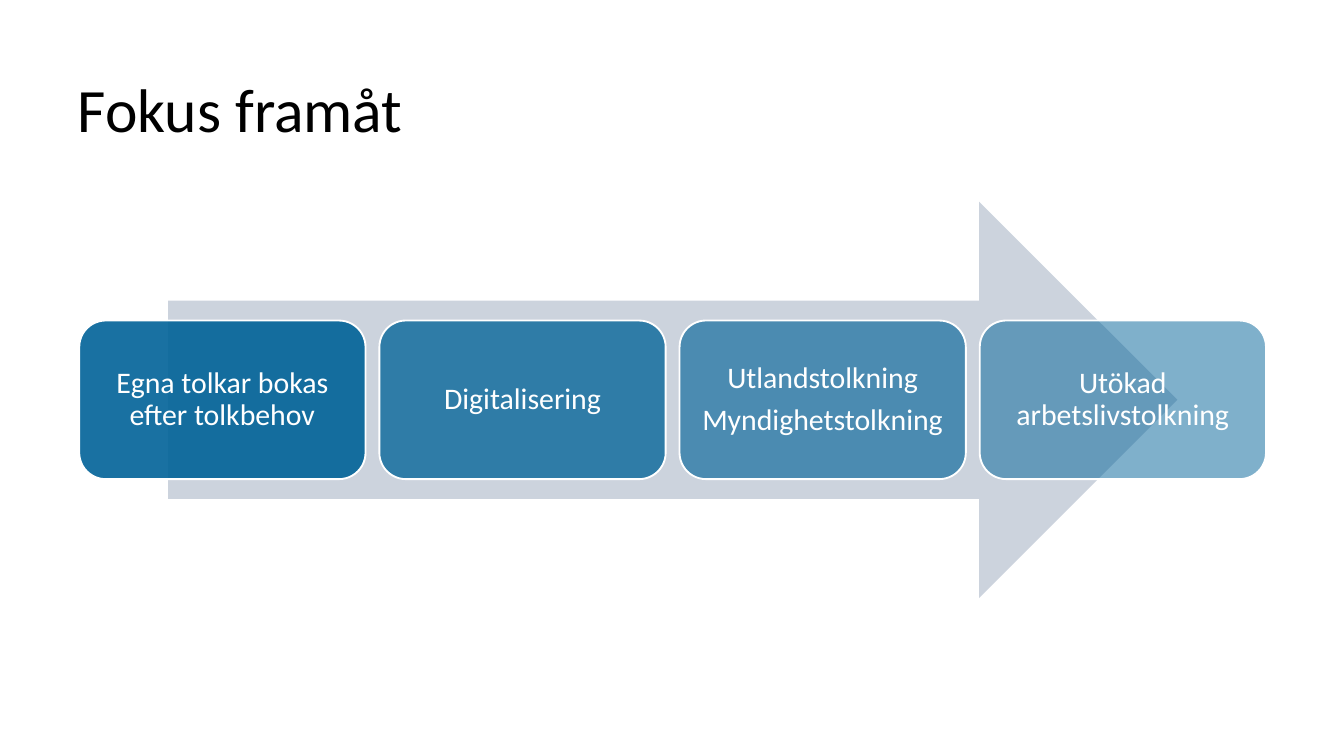
from dataclasses import dataclass

from lxml import etree
from pptx import Presentation
from pptx.dml.color import RGBColor as RGB
from pptx.enum.shapes import MSO_SHAPE as Shape
from pptx.enum.text import MSO_ANCHOR as Anchor, PP_ALIGN as Align
from pptx.oxml.ns import qn
from pptx.util import Inches, Pt

# Content: each step has its lines and its opacity in percent
HEADING = "Fokus framåt"
STEPS = [
    (["Egna tolkar bokas efter tolkbehov"], 90),
    (["Digitalisering"], 77),
    (["Utlandstolkning", "Myndighetstolkning"], 63),
    (["Utökad arbetslivstolkning"], 50),
]


@dataclass(frozen=True)
class Theme:
    font: str = "Calibri"
    heading_size: int = 33
    step_size: int = 16
    black: RGB = RGB(0x00, 0x00, 0x00)
    white: RGB = RGB(0xFF, 0xFF, 0xFF)
    arrow: RGB = RGB(0xCC, 0xD3, 0xDD)
    step: RGB = RGB(0x00, 0x62, 0x98)


THEME = Theme()

# Layout in inches
SLIDE_WIDTH = 10
SLIDE_HEIGHT = SLIDE_WIDTH * 9 / 16
ARROW_LEFT, ARROW_TOP, ARROW_WIDTH, ARROW_HEIGHT = 1.25, 1.5, 7.51, 2.95
STEP_WIDTH, STEP_HEIGHT = 2.13, 1.18
FIRST_LEFT, LAST_LEFT = 0.59, 7.29
STEP_PITCH = (LAST_LEFT - FIRST_LEFT) / (len(STEPS) - 1)
STEP_TOP = ARROW_TOP + (ARROW_HEIGHT - STEP_HEIGHT) / 2


def write(holder, lines, size, color, align, inset):
    frame = holder.text_frame
    frame.word_wrap = True
    frame.vertical_anchor = Anchor.MIDDLE
    frame.margin_left = frame.margin_right = Inches(inset)
    frame.margin_top = frame.margin_bottom = Inches(inset)
    frame.text = "\n".join(lines)
    for i, line in enumerate(frame.paragraphs):
        line.alignment = align
        line.line_spacing = 0.9
        if i:
            line.space_before = Pt(0.35 * size)
        line.font.name = THEME.font
        line.font.size = Pt(size)
        line.font.color.rgb = color


def add_filled(slide, kind, left, top, width, height, color):
    shape = slide.shapes.add_shape(
        kind, Inches(left), Inches(top), Inches(width), Inches(height))
    shape.shadow.inherit = False
    shape.fill.solid()
    shape.fill.fore_color.rgb = color
    return shape


def set_opacity(shape, percent):
    color = shape._element.spPr.find(qn("a:solidFill"))[0]
    etree.SubElement(color, qn("a:alpha"), val=str(percent * 1000))


def main():
    prs = Presentation()
    prs.slide_width, prs.slide_height = Inches(SLIDE_WIDTH), Inches(SLIDE_HEIGHT)
    slide = prs.slides.add_slide(prs.slide_layouts[6])

    # Heading
    heading = slide.shapes.add_textbox(
        Inches(0.58), Inches(0.27), Inches(8.83), Inches(1.13))
    write(heading, [HEADING], THEME.heading_size, THEME.black, Align.LEFT, 0)

    # Arrow behind the steps
    arrow = add_filled(slide, Shape.RIGHT_ARROW, ARROW_LEFT, ARROW_TOP,
                       ARROW_WIDTH, ARROW_HEIGHT, THEME.arrow)
    arrow.line.fill.background()

    # Steps, fading to the right
    for i, (lines, opacity) in enumerate(STEPS):
        step = add_filled(slide, Shape.ROUNDED_RECTANGLE,
                          FIRST_LEFT + i * STEP_PITCH, STEP_TOP,
                          STEP_WIDTH, STEP_HEIGHT, THEME.step)
        set_opacity(step, opacity)
        step.line.color.rgb = THEME.white
        step.line.width = Pt(1)
        write(step, lines, THEME.step_size, THEME.white, Align.CENTER, 0.07)

    prs.save("out.pptx")


if __name__ == "__main__":
    main()
